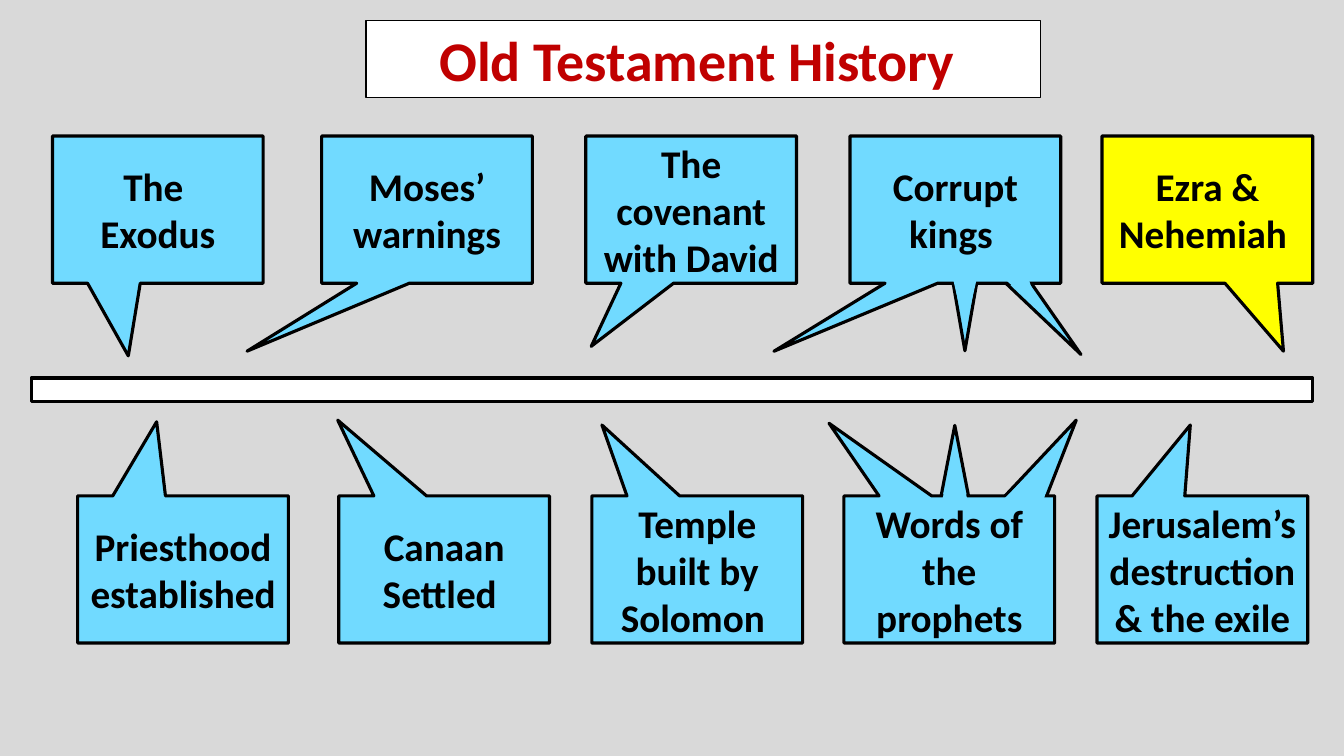
from dataclasses import dataclass

from pptx import Presentation
from pptx.dml.color import RGBColor
from pptx.enum.shapes import MSO_SHAPE as Shape
from pptx.enum.text import MSO_ANCHOR as Anchor, MSO_AUTO_SIZE as AutoSize, PP_ALIGN as Align
from pptx.util import Inches, Pt


@dataclass(frozen=True)
class Theme:
    """Colours, font and sizes of the timeline slide."""
    font: str = "Calibri"
    background: str = "D9D9D9"
    white: str = "FFFFFF"
    black: str = "000000"
    title: str = "C00000"
    event: str = "71DAFF"
    highlight: str = "FFFF00"
    title_size: int = 40
    event_size: int = 28
    thin: float = 0.75
    thick: float = 2.25


THEME = Theme()
CARD_SIZE = (2.09, 1.46)
UPPER_TOP, LOWER_TOP = 1.35, 4.92

UPPER_EVENTS = [
    (10.93, "Ezra & Nehemiah ", (0.361, 0.962), THEME.highlight),
    (0.52, "The \nExodus", (-0.14, 0.994), THEME.event),
    (3.19, "Moses’ warnings", (-0.854, 0.962), THEME.event),
    (5.81, "The covenant with David", (-0.474, 0.929), THEME.event),
]
LOWER_EVENTS = [
    (0.77, "Priesthood established", (-0.125, -1.004), THEME.event),
    (3.36, "Canaan Settled ", (-0.505, -1.015), THEME.event),
    (5.87, "Temple built by Solomon ", (-0.452, -0.982), THEME.event),
    (10.88, "Jerusalem’s destruction & the exile", (-0.057, -0.982), THEME.event),
]

KINGS = (8.43, "Corrupt kings ", (-0.861, 0.963), THEME.event)
KINGS_SPIKES = [((1.68, 0.91, 0.29, 1.43), 139.3), ((0.98, 1.21, 0.32, 0.92), 180)]
KINGS_COVERS = [((0.98, 1.23, 0.32, 0.7), 180), ((1.61, 1.26, 0.26, 0.52), 146.5)]
PROPHETS = (8.37, "Words of the prophets", (-0.571, -0.994), THEME.event)
PROPHETS_SPIKES = [((1.84, -0.83, 0.39, 1.01), 32.3), ((0.96, -0.7, 0.28, 0.72), 0)]
PROPHETS_COVERS = [((0.96, -0.47, 0.28, 0.57), 0), ((1.74, -0.54, 0.4, 0.72), 30.1)]


def add_shape(slide, kind, box, fill, line_width=None):
    """Add a filled shape, outlined in black when a line width is given."""
    shape = slide.shapes.add_shape(kind, *map(Inches, box))
    shape.shadow.inherit = False
    shape.fill.solid()
    shape.fill.fore_color.rgb = RGBColor.from_string(fill)
    if line_width is None:
        shape.line.fill.background()
    else:
        shape.line.color.rgb = RGBColor.from_string(THEME.black)
        shape.line.width = Pt(line_width)
    return shape


def write_text(shape, text, size, color, frame_format):
    """Write bold centred paragraphs into a shape."""
    frame = shape.text_frame
    frame.text = text
    for name, value in {"word_wrap": True, **frame_format}.items():
        setattr(frame, name, value)
    font_format = {"name": THEME.font, "size": Pt(size), "bold": True}
    for paragraph in frame.paragraphs:
        paragraph.alignment = Align.CENTER
        for run in paragraph.runs:
            for name, value in font_format.items():
                setattr(run.font, name, value)
            run.font.color.rgb = RGBColor.from_string(color)


def add_title(slide, box):
    """Add the framed slide title."""
    shape = add_shape(slide, Shape.RECTANGLE, box, THEME.white, THEME.thin)
    write_text(shape, "Old Testament History ", THEME.title_size, THEME.title,
               {"vertical_anchor": Anchor.TOP, "auto_size": AutoSize.SHAPE_TO_FIT_TEXT})


def add_event(slide, top, event):
    """Add one event callout whose tip points at the timeline."""
    left, text, tip, fill = event
    box = (left, top, *CARD_SIZE)
    shape = add_shape(slide, Shape.RECTANGULAR_CALLOUT, box, fill, THEME.thick)
    for index, value in enumerate(tip):
        shape.adjustments[index] = value
    write_text(shape, text, THEME.event_size, THEME.black, {"vertical_anchor": Anchor.MIDDLE})


def add_spikes(slide, left, top, spikes, line_width=None):
    """Add extra pointers, placed relative to the corner of their card."""
    for (x, y, width, height), rotation in spikes:
        box = (left + x, top + y, width, height)
        shape = add_shape(slide, Shape.ISOSCELES_TRIANGLE, box, THEME.event, line_width)
        shape.rotation = rotation


def add_long_event(slide, top, event, spikes, covers):
    """Add an event with three pointers, the covers hiding the card edge."""
    left = event[0]
    add_spikes(slide, left, top, spikes, THEME.thick)
    add_event(slide, top, event)
    add_spikes(slide, left, top, covers)


def main():
    """Build and save the timeline slide."""
    presentation = Presentation()
    presentation.slide_width = Inches(13.33)
    presentation.slide_height = Inches(7.5)
    slide = presentation.slides.add_slide(presentation.slide_layouts[6])
    slide.background.fill.solid()
    slide.background.fill.fore_color.rgb = RGBColor.from_string(THEME.background)

    add_shape(slide, Shape.RECTANGLE, (0.31, 3.75, 12.71, 0.23), THEME.white, THEME.thick)
    add_title(slide, (3.63, 0.2, 6.69, 0.77))
    for top, events in ((UPPER_TOP, UPPER_EVENTS), (LOWER_TOP, LOWER_EVENTS)):
        for event in events:
            add_event(slide, top, event)
    add_long_event(slide, UPPER_TOP, KINGS, KINGS_SPIKES, KINGS_COVERS)
    add_long_event(slide, LOWER_TOP, PROPHETS, PROPHETS_SPIKES, PROPHETS_COVERS)
    presentation.save("out.pptx")


if __name__ == "__main__":
    main()
